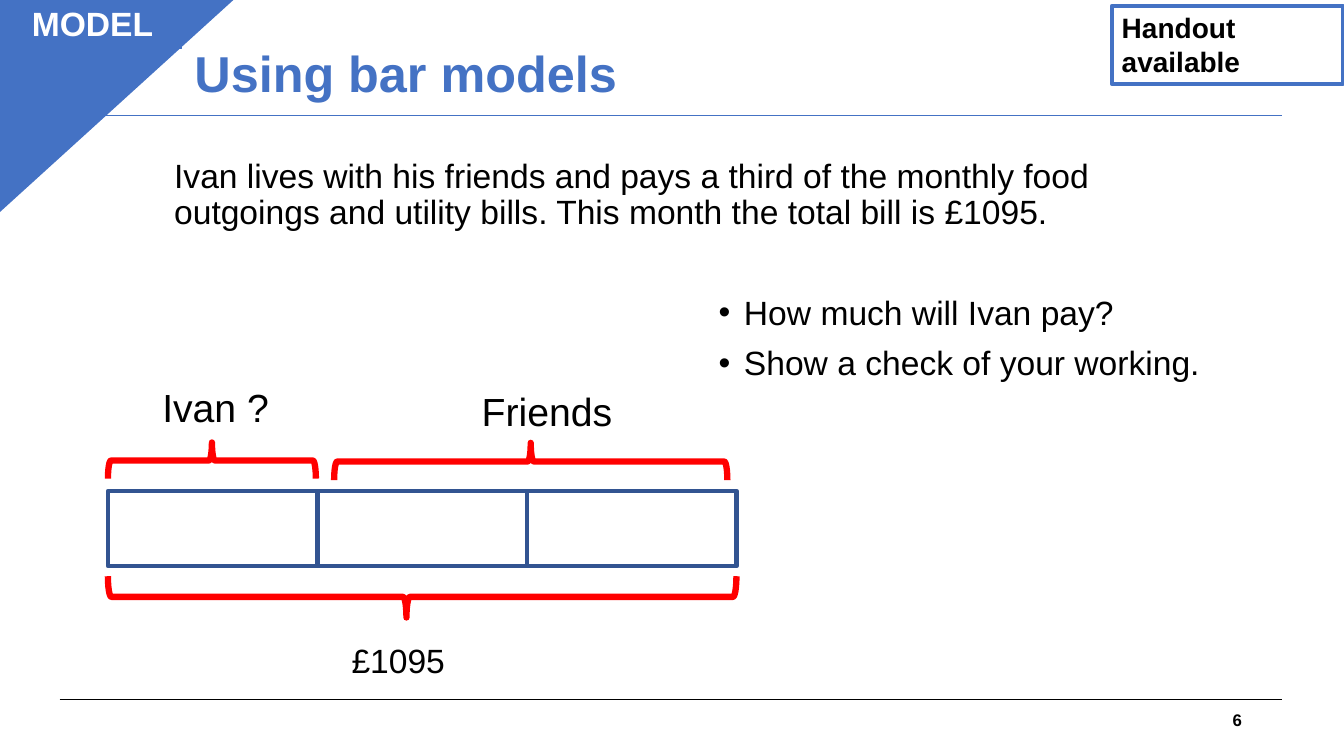
from lxml.etree import SubElement
from pptx import Presentation
from pptx.dml.color import RGBColor
from pptx.enum.shapes import MSO_CONNECTOR, MSO_SHAPE
from pptx.enum.text import MSO_ANCHOR, PP_ALIGN
from pptx.oxml.ns import qn
from pptx.util import Cm, Pt

COLORS = {
    "black": "000000",
    "white": "FFFFFF",
    "blue": "4472C4",
    "bar_edge": "325491",
    "red": "FF0000",
}


def color(name):
    return RGBColor.from_string(COLORS[name])


def write(shape, lines, size, ink="black", bold=False, align=PP_ALIGN.LEFT,
          anchor=MSO_ANCHOR.TOP, spacing=None, bullets=False):
    frame = shape.text_frame
    frame.text = "\n".join(lines)
    frame.word_wrap = True
    frame.vertical_anchor = anchor
    for index, para in enumerate(frame.paragraphs):
        if bullets:
            properties = para._p.get_or_add_pPr()
            properties.set("marL", str(Cm(0.64)))
            properties.set("indent", str(-Cm(0.64)))
            SubElement(properties, qn("a:buFont")).set("typeface", "Arial")
            SubElement(properties, qn("a:buChar")).set("char", "•")
            if index:
                para.space_before = Pt(10)
        para.alignment = align
        if spacing:
            para.line_spacing = spacing
        for span in para.runs:
            span.font.name = "Arial"
            span.font.size = Pt(size)
            span.font.bold = bold
            span.font.color.rgb = color(ink)


def add_text(page, box, lines, size, **style):
    write(page.shapes.add_textbox(*map(Cm, box)), lines, size, **style)


def add_outline(page, kind, box, edge, weight, fill=None):
    shape = page.shapes.add_shape(kind, *map(Cm, box))
    shape.shadow.inherit = False
    if fill:
        shape.fill.solid()
        shape.fill.fore_color.rgb = color(fill)
    else:
        shape.fill.background()
    shape.line.color.rgb = color(edge)
    shape.line.width = Pt(weight)
    return shape


def add_rule(page, left, top, width, ink):
    rule = page.shapes.add_connector(
        MSO_CONNECTOR.STRAIGHT, Cm(left), Cm(top), Cm(left + width), Cm(top))
    SubElement(rule._element.spPr, qn("a:effectLst"))
    rule.line.color.rgb = color(ink)
    rule.line.width = Pt(0.75)


def add_brace(page, box, rotation, middle=0.5):
    left, top, width, height = box
    shift = (width - height) / 2
    brace = add_outline(page, MSO_SHAPE.LEFT_BRACE,
                        (left + shift, top - shift, height, width), "red", 4.5)
    brace.adjustments[0] = 0.083
    brace.adjustments[1] = middle
    brace.rotation = rotation


def draw_frame(page, box):
    left, top, width, height = box
    add_rule(page, left, top + height, width, "black")
    add_rule(page, left, top, width, "blue")
    add_text(page, (left + width - 8.38, top + height, 7.62, 1.02), ["6"], 12,
             bold=True, align=PP_ALIGN.RIGHT, anchor=MSO_ANCHOR.MIDDLE)


def draw_problem(page, box):
    left, top, width, height = box
    add_text(page, (left, top, 24.87, height / 2),
             ["Ivan lives with his friends and pays a third of the monthly food "
              "outgoings and utility bills. This month the total bill is £1095."],
             24, spacing=0.9)
    add_text(page, (left + width - 14.96, top + 3.45, 14.96, 3.25),
             ["How much will Ivan pay?", "Show a check of your working."],
             24, spacing=0.9, bullets=True)


def draw_bar_model(page, box):
    left, top, width, height = box
    part = width / 3
    for index in range(3):
        add_outline(page, MSO_SHAPE.RECTANGLE,
                    (left + index * part, top, part, height),
                    "bar_edge", 3, "white")
    add_brace(page, (left, top + height + 0.25, width, 1.04), 270, 0.475)
    add_brace(page, (left, top - 1.22, part - 0.04, 0.91), 90)
    add_brace(page, (left + 5.7, top - 1.21, 9.91, 0.94), 90)
    for label, across, down, size in (("£1095", 5.89, 3.63, 24),
                                      ("Ivan ?", 1.12, -2.84, 28),
                                      ("Friends", 9.17, -2.74, 28)):
        add_text(page, (left + across, top + down, 4.04, 1.45), [label], size)


def draw_corner(page, box):
    left, top, width, height = box
    corner = add_outline(page, MSO_SHAPE.ISOSCELES_TRIANGLE, box, "blue", 1, "blue")
    corner.adjustments[0] = 1
    corner.rotation = 180
    tag = add_outline(page, MSO_SHAPE.RECTANGLE,
                      (left + 0.16, top, 4.5, 1.27), "blue", 0.75, "blue")
    write(tag, ["MODEL"], 24, ink="white", bold=True, align=PP_ALIGN.CENTER)


def draw_heading(page, box):
    left, top, width, height = box
    handout = add_outline(page, MSO_SHAPE.RECTANGLE,
                          (left + width - 5.82, top, 5.82, 1.96), "blue", 3)
    write(handout, ["Handout available"], 20, bold=True)
    add_text(page, (left, top + 0.15, 23, height), ["Using bar models"], 36,
             ink="blue", bold=True, anchor=MSO_ANCHOR.MIDDLE, spacing=0.9)


def main():
    deck = Presentation()
    deck.slide_width, deck.slide_height = Cm(33.87), Cm(19.05)
    page = deck.slides.add_slide(deck.slide_layouts[6])
    draw_frame(page, (1.5, 2.9, 30.81, 14.73))
    draw_problem(page, (4.14, 3.89, 28.68, 6.7))
    draw_bar_model(page, (2.72, 12.37, 15.84, 1.9))
    draw_corner(page, (-0.08, -0.05, 5.99, 5.44))
    draw_heading(page, (4.65, 0.15, 29.19, 3.25))
    deck.save("out.pptx")


if __name__ == "__main__":
    main()
